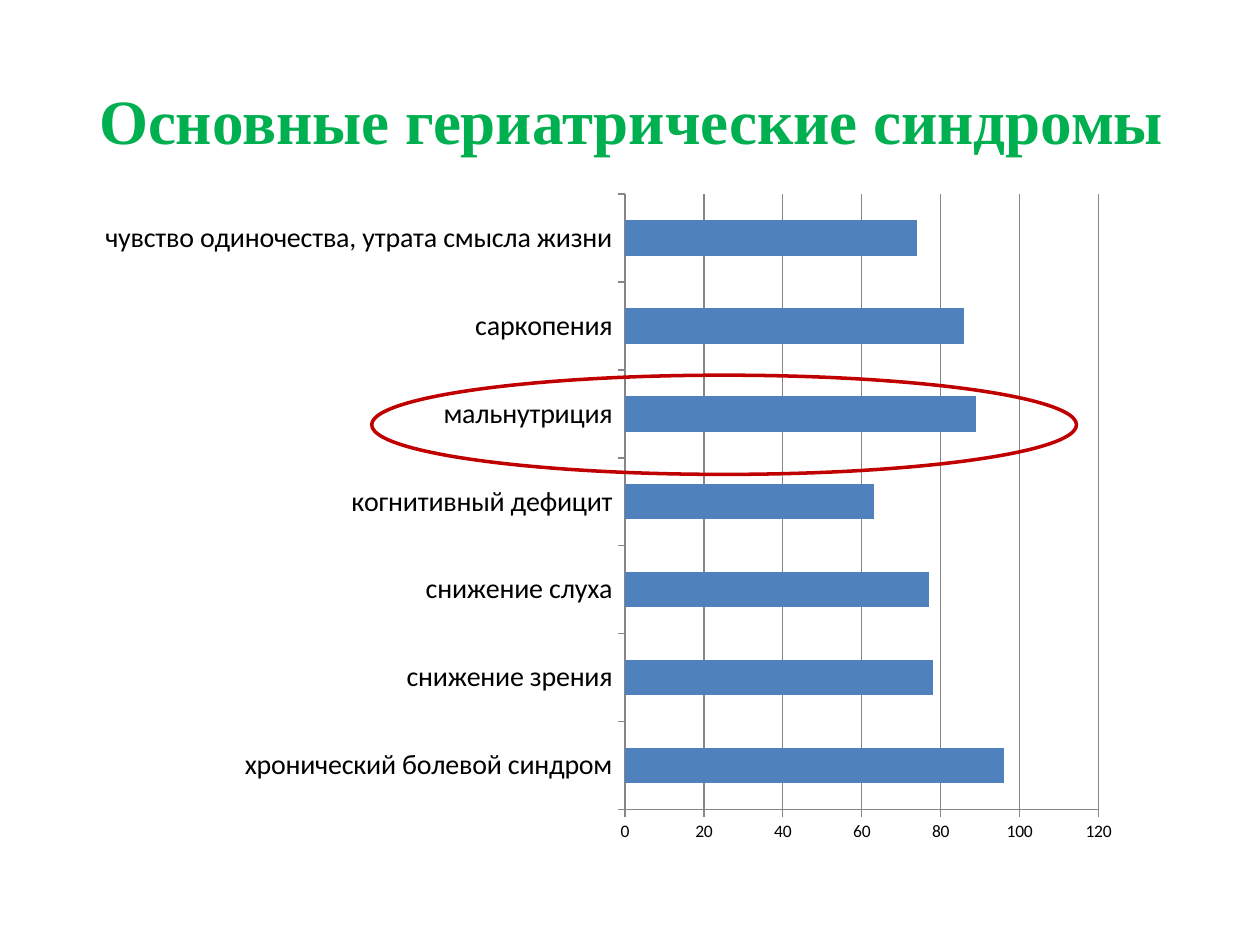
from dataclasses import dataclass

from lxml import etree
from pptx import Presentation
from pptx import util as u
from pptx.chart import data as chart_data
from pptx.dml.color import RGBColor
from pptx.enum import chart as charts, shapes, text
from pptx.oxml import ns


@dataclass(frozen=True)
class Theme:
    """Colours, fonts and type sizes of the slide."""
    title: RGBColor = RGBColor(0x00, 0xB0, 0x50)
    bar: RGBColor = RGBColor(0x4F, 0x81, 0xBD)
    grid: RGBColor = RGBColor(0x86, 0x86, 0x86)
    ink: RGBColor = RGBColor(0x00, 0x00, 0x00)
    accent: RGBColor = RGBColor(0xC0, 0x00, 0x00)
    title_font: str = "Times New Roman"
    body_font: str = "Calibri"
    title_size: u.Pt = u.Pt(36)
    label_size: u.Pt = u.Pt(16)
    scale_size: u.Pt = u.Pt(10)
    thin: u.Pt = u.Pt(0.75)
    thick: u.Pt = u.Pt(2)


THEME = Theme()
SYNDROMES = {
    "хронический болевой синдром": 96,
    "снижение зрения": 78,
    "снижение слуха": 77,
    "когнитивный дефицит": 63,
    "мальнутриция": 89,
    "саркопения": 86,
    "чувство одиночества, утрата смысла жизни": 74,
}


def add_title(page, box, wording):
    """Place the title placeholder in the box and write its wording."""
    title = page.shapes.title
    title.left, title.top, title.width, title.height = map(u.Cm, box)
    frame = title.text_frame
    frame.word_wrap = True
    frame.vertical_anchor = text.MSO_ANCHOR.MIDDLE
    para = frame.paragraphs[0]
    para.alignment = text.PP_ALIGN.CENTER
    span = para.add_run()
    span.text = wording
    span.font.name = THEME.title_font
    span.font.size = THEME.title_size
    span.font.bold = True
    span.font.color.rgb = THEME.title


def set_plot_area(chart, **fractions):
    """Fix the inner plot area as fractions of the chart."""
    area = chart._chartSpace.chart.plotArea
    for old in area.findall(ns.qn("c:layout")):
        area.remove(old)
    layout = etree.Element(ns.qn("c:layout"))
    manual = etree.SubElement(layout, ns.qn("c:manualLayout"))
    settings = {"layoutTarget": "inner", "xMode": "edge", "yMode": "edge", **fractions}
    for name, value in settings.items():
        etree.SubElement(manual, ns.qn(f"c:{name}")).set("val", str(value))
    area.insert(0, layout)


def style_axis(axis, size):
    """Give an axis its line, ticks and label type."""
    axis.major_tick_mark = charts.XL_TICK_MARK.OUTSIDE
    axis.minor_tick_mark = charts.XL_TICK_MARK.NONE
    axis.format.line.color.rgb = THEME.grid
    axis.format.line.width = THEME.thin
    font = axis.tick_labels.font
    font.name, font.size = THEME.body_font, size
    font.color.rgb = THEME.ink


def add_syndrome_chart(page, box):
    """Draw the syndrome bars in the box and ring the malnutrition row."""
    left, top, width, height = box
    data = chart_data.CategoryChartData()
    data.categories = SYNDROMES.keys()
    data.add_series("Series 1", SYNDROMES.values())
    chart = page.shapes.add_chart(
        charts.XL_CHART_TYPE.BAR_CLUSTERED, *map(u.Cm, box), data
    ).chart
    chart.has_title = False
    chart.has_legend = False
    chart.font.name, chart.font.size = THEME.body_font, THEME.scale_size
    chart.font.color.rgb = THEME.ink
    set_plot_area(chart, x=0.5, y=0.04, w=0.43, h=0.85)

    plot = chart.plots[0]
    plot.gap_width = 150
    plot.vary_by_categories = False
    fill = plot.series[0].format.fill
    fill.solid()
    fill.fore_color.rgb = THEME.bar

    style_axis(chart.category_axis, THEME.label_size)
    scale = chart.value_axis
    style_axis(scale, THEME.scale_size)
    scale.minimum_scale, scale.maximum_scale, scale.major_unit = 0, 120, 20
    scale.has_major_gridlines = True
    scale.major_gridlines.format.line.color.rgb = THEME.grid
    scale.major_gridlines.format.line.width = THEME.thin

    ring_box = left + 0.27 * width, top + 0.29 * height, 0.64 * width, 2
    ring = page.shapes.add_shape(shapes.MSO_SHAPE.OVAL, *map(u.Cm, ring_box))
    ring.shadow.inherit = False
    ring.fill.background()
    ring.line.color.rgb = THEME.accent
    ring.line.width = THEME.thick


def main():
    """Build the deck and save it."""
    deck = Presentation()
    deck.slide_width, deck.slide_height = u.Cm(25.4), u.Cm(19.05)
    page = deck.slides.add_slide(deck.slide_layouts.get_by_name("Title Only"))
    add_title(page, (1.3, 1.12, 22.86, 2.57), "Основные гериатрические синдромы")
    add_syndrome_chart(page, (1.5, 3.33, 22.2, 14.6))
    deck.save("out.pptx")


if __name__ == "__main__":
    main()
